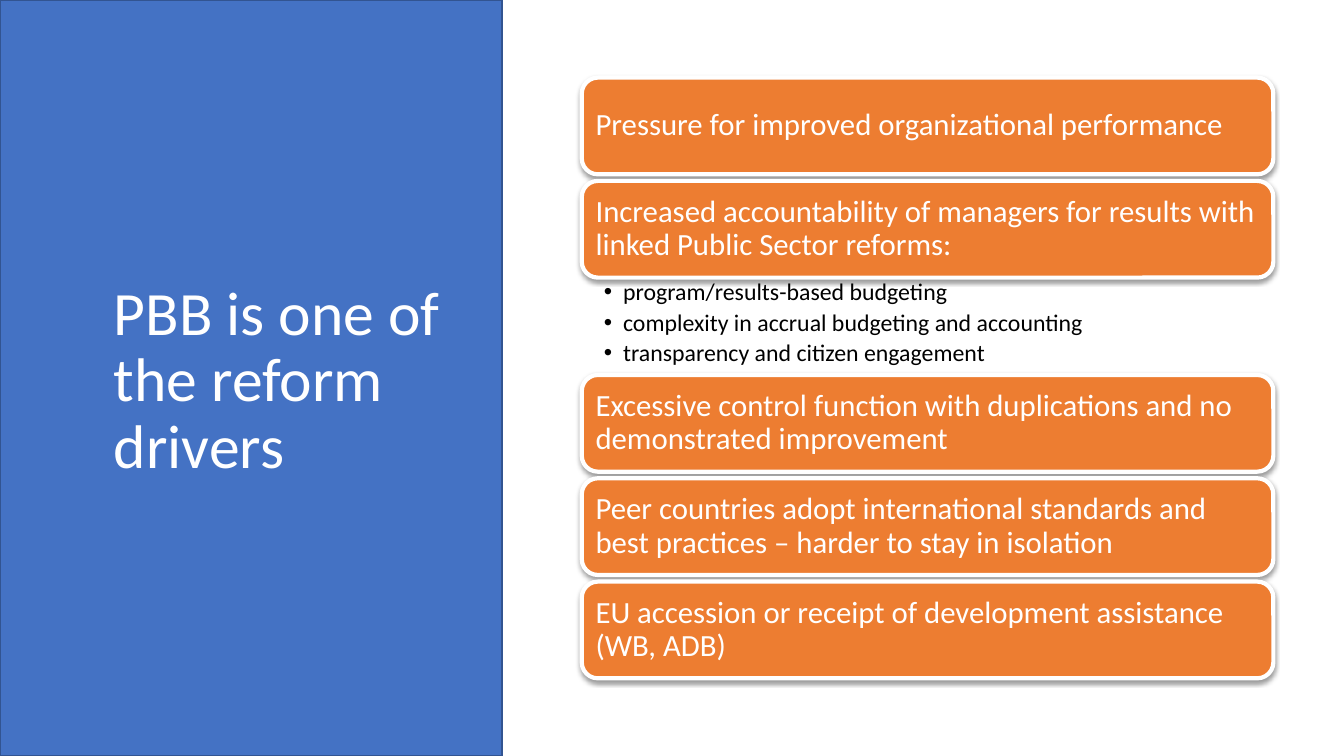
from lxml.etree import SubElement
from pptx import Presentation
from pptx.dml.color import RGBColor
from pptx.enum.shapes import MSO_SHAPE
from pptx.enum.text import MSO_ANCHOR, PP_ALIGN
from pptx.oxml.ns import qn
from pptx.util import Inches, Pt

BLUE = RGBColor(0x44, 0x72, 0xC4)
DARK_BLUE = RGBColor(0x32, 0x54, 0x91)
ORANGE = RGBColor(0xED, 0x7D, 0x31)
WHITE = RGBColor(0xFF, 0xFF, 0xFF)
BLACK = RGBColor(0, 0, 0)

# Card column: left edge, width, card height, row pitch
LEFT, WIDTH, CARD_H, PITCH = 5.77, 6.86, 0.96, 1.025
TOP, LIST_H = 0.77, 0.97

CARDS = [
    ("Pressure for improved organizational performance", []),
    ("Increased accountability of managers for results with linked Public Sector reforms:",
     ["program/results-based budgeting",
      "complexity in accrual budgeting and accounting",
      "transparency and citizen engagement"]),
    ("Excessive control function with duplications and no demonstrated improvement", []),
    ("Peer countries adopt international standards and best practices – harder to stay in isolation", []),
    ("EU accession or receipt of development assistance (WB, ADB)", []),
]


def write(s, lines, size, color, anchor=MSO_ANCHOR.MIDDLE, insets=(0.1, 0.05, 0.1, 0.05),
          after=0, bullet=False):
    tf = s.text_frame
    tf.word_wrap = True
    tf.vertical_anchor = anchor
    tf.margin_left, tf.margin_top, tf.margin_right, tf.margin_bottom = map(Inches, insets)
    for i, text in enumerate(lines):
        p = tf.paragraphs[0] if i == 0 else tf.add_paragraph()
        p.alignment = PP_ALIGN.LEFT
        p.line_spacing = 0.9
        p.space_after = Pt(after)
        if bullet:
            p.level = 1
            pPr = p._p.get_or_add_pPr()
            pPr.set("marL", str(Inches(0.19)))
            pPr.set("indent", str(Inches(-0.19)))
            SubElement(pPr, qn("a:buFont"), typeface="Arial")
            SubElement(pPr, qn("a:buChar"), char="•")
        r = p.add_run()
        r.text = text
        r.font.name = "Calibri"
        r.font.size = Pt(size)
        r.font.color.rgb = color


def add_block(s_tree, kind, box, fill, line, width):
    s = s_tree.add_shape(kind, *map(Inches, box))
    s.shadow.inherit = False
    s.fill.solid()
    s.fill.fore_color.rgb = fill
    s.line.color.rgb = line
    s.line.width = Pt(width)
    return s


prs = Presentation()
prs.slide_width, prs.slide_height = Inches(13.33), Inches(7.5)
slide = prs.slides.add_slide(prs.slide_layouts[5])
shapes = slide.shapes

# Blue panel, placed behind the title
panel = add_block(shapes, MSO_SHAPE.RECTANGLE, (0, 0, 4.98, 7.5), BLUE, DARK_BLUE, 2)
title = shapes.title
panel._element.addnext(title._element)
title.left, title.top, title.width, title.height = map(Inches, (1.03, 0.78, 3.69, 6.02))
write(title, ["PBB is one of the reform drivers"], 44, WHITE)

# Driver cards, with a bullet list under the card that has one
y = TOP
for heading, points in CARDS:
    card = add_block(shapes, MSO_SHAPE.ROUNDED_RECTANGLE, (LEFT, y, WIDTH, CARD_H), ORANGE, WHITE, 3)
    effects = card._element.spPr.find(qn("a:effectLst"))
    shadow = SubElement(effects, qn("a:outerShdw"), blurRad="40000", dist="20000",
                        dir="5400000", rotWithShape="0")
    black = SubElement(shadow, qn("a:srgbClr"), val="000000")
    SubElement(black, qn("a:alpha"), val="38000")
    write(card, [heading], 22, WHITE, insets=(0.09,) * 4)
    y += PITCH
    if points:
        y = round(y - PITCH + CARD_H, 2)
        box = shapes.add_textbox(*map(Inches, (LEFT, y, WIDTH, LIST_H)))
        write(box, points, 17, BLACK, anchor=MSO_ANCHOR.TOP,
              insets=(0.22, 0.03, 0.17, 0.03), after=3.4, bullet=True)
        y += LIST_H

prs.save("out.pptx")
